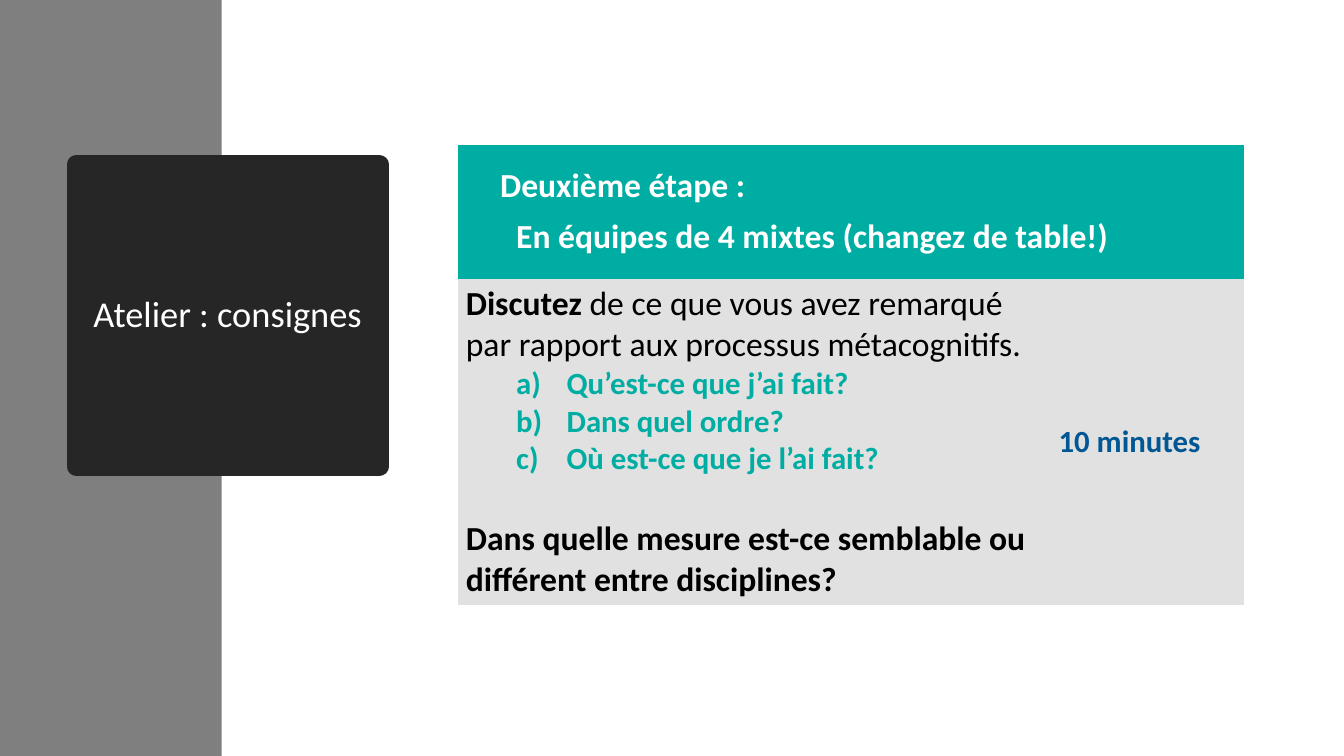
from dataclasses import dataclass

from lxml import etree
from pptx import Presentation
from pptx.dml.color import RGBColor
from pptx.enum.shapes import MSO_SHAPE
from pptx.enum.text import MSO_ANCHOR, MSO_AUTO_SIZE, PP_ALIGN
from pptx.oxml.ns import qn
from pptx.util import Inches, Pt

RECTANGLE = MSO_SHAPE.RECTANGLE
MIDDLE = MSO_ANCHOR.MIDDLE
CENTER = PP_ALIGN.CENTER
NO_AUTOFIT = MSO_AUTO_SIZE.NONE
PLAIN_TABLE_STYLE = "{2D5ABB26-0587-4C30-8999-92F81FD0307C}"
SLIDE_W, SLIDE_H = 13.33, 7.5


@dataclass(frozen=True)
class Theme:
    font: str = "Calibri"
    title_size: int = 26
    text_size: int = 24
    detail_size: int = 22
    white: str = "FFFFFF"
    black: str = "000000"
    band: str = "7F7F7F"
    dark: str = "262626"
    teal: str = "00ADA2"
    blue: str = "005793"
    grey: str = "E1E1E1"


THEME = Theme()


def paint(fill, color):
    fill.solid()
    fill.fore_color.rgb = RGBColor.from_string(color)


def add_run(p, text, size, color, bold=False):
    r = p.add_run()
    r.text = text
    formats = {"name": THEME.font, "size": Pt(size), "bold": bold}
    for name, value in formats.items():
        setattr(r.font, name, value)
    r.font.color.rgb = RGBColor.from_string(color)


def set_indent(p, left, first=0, numbering=None):
    """Indent a paragraph in inches, optionally with automatic numbering."""
    pPr = p._p.get_or_add_pPr()
    pPr.set("marL", str(Inches(left)))
    pPr.set("indent", str(Inches(first)))
    if numbering:
        etree.SubElement(pPr, qn("a:buAutoNum")).set("type", numbering)


def add_paragraphs(tf, paragraphs):
    """Write (runs, paragraph formats, indent arguments) into a text frame."""
    for i, (runs, formats, indent) in enumerate(paragraphs):
        p = tf.paragraphs[0] if i == 0 else tf.add_paragraph()
        for name, value in formats.items():
            setattr(p, name, value)
        if indent:
            set_indent(p, *indent)
        for run in runs:
            add_run(p, *run)


def add_side_band(s, left, top, width, height):
    band = s.shapes.add_shape(RECTANGLE, *map(Inches, (left, top, width, height)))
    band.shadow.inherit = False
    paint(band.fill, THEME.band)
    band.line.fill.background()
    s.shapes._spTree.insert(2, band._element)  # behind the title


def add_title(s, left, top, width, height):
    """Dark title tile; its thick round-joined outline softens the corners."""
    title = s.shapes.title
    box = {"left": left, "top": top, "width": width, "height": height}
    for name, value in box.items():
        setattr(title, name, Inches(value))
    paint(title.fill, THEME.dark)
    paint(title.line.fill, THEME.dark)
    title.line.width = Pt(13.75)
    etree.SubElement(title.line._get_or_add_ln(), qn("a:round"))
    tf = title.text_frame
    formats = {"word_wrap": True, "auto_size": NO_AUTOFIT, "vertical_anchor": MIDDLE}
    for name, value in formats.items():
        setattr(tf, name, value)
    add_paragraphs(tf, [([("Atelier : consignes", THEME.title_size, THEME.white)],
                         {"alignment": CENTER, "line_spacing": 0.9}, None)])


def add_instructions(s, left, top, width, height):
    frame = s.shapes.add_table(2, 2, *map(Inches, (left, top, width, height)))
    table = frame.table
    table.first_row = table.horz_banding = False
    table._tbl.tblPr.find(qn("a:tableStyleId")).text = PLAIN_TABLE_STYLE
    header_h, tasks_w = 1.33, 5.88
    for row, h in zip(table.rows, (header_h, height - header_h)):
        row.height = Inches(h)
    for column, w in zip(table.columns, (tasks_w, width - tasks_w)):
        column.width = Inches(w)
    table.cell(0, 0).merge(table.cell(0, 1))

    size, detail = THEME.text_size, THEME.detail_size
    heading = {"line_spacing": 0.9, "space_before": Pt(10)}
    header = [
        ([("Deuxième étape :", size, THEME.white, True)], heading, (0.34,)),
        ([("En équipes de 4 mixtes (changez de table!)", size, THEME.white, True)],
         heading, (0.5,)),
    ]
    questions = ("Qu’est-ce que j’ai fait?", "Dans quel ordre?",
                 "Où est-ce que je l’ai fait?")
    tasks = [
        ([("Discutez", size, THEME.black, True),
          (" de ce que vous avez remarqué par rapport aux processus métacognitifs.",
           size, THEME.black)], {}, None),
        *[([(q, detail, THEME.teal, True)], {}, (1, -0.5, "alphaLcParenR"))
          for q in questions],
        ([("Dans quelle mesure est-ce semblable ou différent entre disciplines?",
           size, THEME.black, True)], {"space_before": Pt(29)}, None),
    ]
    duration = [([("10 minutes", detail, THEME.blue, True)], {}, None)]

    cell_formats = {"vertical_anchor": MIDDLE,
                    "margin_left": Inches(0.08), "margin_right": Inches(0.08),
                    "margin_top": Inches(0.04), "margin_bottom": Inches(0.04)}
    for row, col, color, paragraphs in ((0, 0, THEME.teal, header),
                                        (1, 0, THEME.grey, tasks),
                                        (1, 1, THEME.grey, duration)):
        cell = table.cell(row, col)
        paint(cell.fill, color)
        for name, value in cell_formats.items():
            setattr(cell, name, value)
        add_paragraphs(cell.text_frame, paragraphs)


def main():
    prs = Presentation()
    prs.slide_width, prs.slide_height = Inches(SLIDE_W), Inches(SLIDE_H)
    s = prs.slides.add_slide(prs.slide_layouts.get_by_name("Title Only"))
    add_side_band(s, 0, 0, 0.165 * SLIDE_W, SLIDE_H)
    add_title(s, 0.76, 1.63, 3, 3)
    add_instructions(s, 4.54, 1.44, 7.8, 4.56)
    prs.save("out.pptx")


if __name__ == "__main__":
    main()
